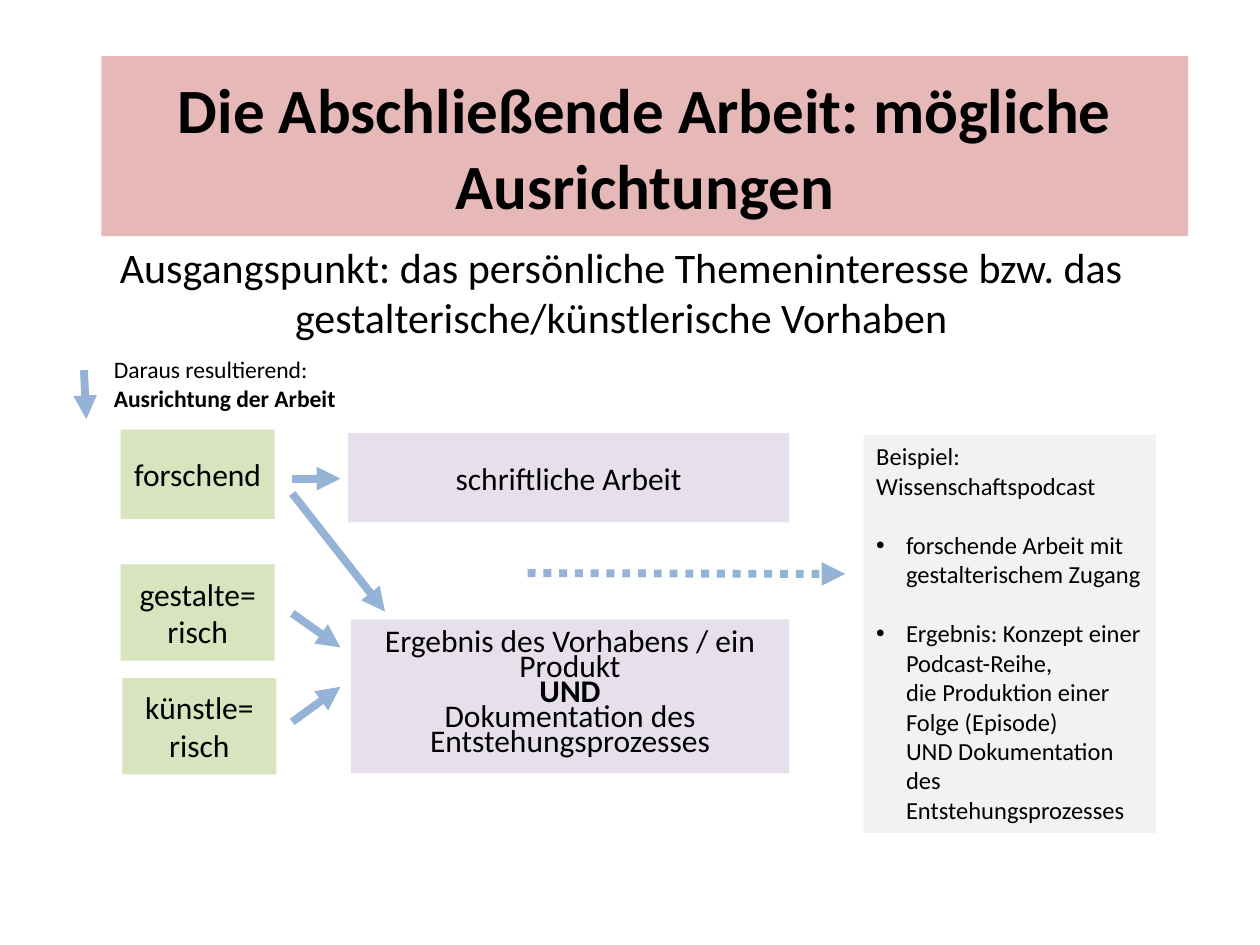
from lxml.etree import SubElement
from pptx import Presentation
from pptx.dml.color import RGBColor
from pptx.enum.dml import MSO_LINE_DASH_STYLE as Dash
from pptx.enum.shapes import MSO_CONNECTOR_TYPE as Connector, MSO_SHAPE as Shape
from pptx.enum.text import MSO_ANCHOR as Anchor, MSO_AUTO_SIZE as AutoSize, PP_ALIGN as Align
from pptx.oxml.ns import qn
from pptx.util import Pt

BLACK = RGBColor(0, 0, 0)
ROSE = RGBColor(0xE6, 0xB9, 0xB8)
GREEN = RGBColor(0xD7, 0xE4, 0xBD)
LILAC = RGBColor(0xE6, 0xE0, 0xEC)
GREY = RGBColor(0xF2, 0xF2, 0xF2)
BLUE = RGBColor(0x95, 0xB3, 0xD7)


def write(target, paragraphs, size=18, bold=(), align=Align.CENTER,
          anchor=Anchor.MIDDLE, leading=None, gap=0):
    frame = target.text_frame
    frame.word_wrap = True
    frame.auto_size = AutoSize.NONE
    frame.vertical_anchor = anchor
    for index, text in enumerate(paragraphs):
        paragraph = frame.add_paragraph() if index else frame.paragraphs[0]
        paragraph.alignment = align
        paragraph.space_before = Pt(gap if index else 0)
        if leading:
            paragraph.line_spacing = Pt(leading)
        for number, line in enumerate(text.split("\n")):
            if number:
                paragraph.add_line_break()
            run = paragraph.add_run()
            run.text = line
            font = run.font
            font.name, font.size, font.bold = "Calibri", Pt(size), line in bold
            font.color.rgb = BLACK
    return frame


def place(target, box):
    target.left, target.top, target.width, target.height = map(Pt, box)


def fill(target, color):
    target.fill.solid()
    target.fill.fore_color.rgb = color


def add_box(slide, box, color, paragraphs, **style):
    rectangle = slide.shapes.add_shape(Shape.RECTANGLE, *map(Pt, box))
    rectangle.shadow.inherit = False
    fill(rectangle, color)
    rectangle.line.fill.background()
    write(rectangle, paragraphs, **style)


def add_label(slide, box, paragraphs, **style):
    label = slide.shapes.add_textbox(*map(Pt, box))
    write(label, paragraphs, anchor=Anchor.TOP, **style)


def add_arrow(slide, start, end, dash=None):
    arrow = slide.shapes.add_connector(Connector.STRAIGHT, *map(Pt, start + end))
    arrow.line.color.rgb = BLUE
    arrow.line.width = Pt(4.5)
    if dash:
        arrow.line.dash_style = dash
    SubElement(arrow.line._get_or_add_ln(), qn("a:tailEnd"), type="triangle")
    SubElement(arrow._element.spPr, qn("a:effectLst"))


def add_heading(slide, box):
    title = slide.shapes.title
    place(title, box)
    fill(title, ROSE)
    heading = "Die Abschließende Arbeit: mögliche Ausrichtungen"
    write(title, [heading], size=36, bold=(heading,))


def add_introduction(slide, box):
    left, top, width, height = box
    add_label(slide, (left + 3, top, width, height),
              ["Ausgangspunkt: das persönliche Themeninteresse bzw. "
               "das gestalterische/künstlerische Vorhaben"], size=24)
    add_label(slide, (left, top + 65, 262, 40),
              ["Daraus resultierend:\nAusrichtung der Arbeit"], size=13.5,
              bold=("Ausrichtung der Arbeit",), align=Align.LEFT)
    add_arrow(slide, (left - 10, top + 77), (left - 8.7, top + 105))


def add_orientations(slide, box):
    left, top, width = box
    rows = [(0, 0, 51, ["forschend"]),
            (0, 77, 55, ["gestalte=", "risch"]),
            (1, 142, 55, ["künstle=", "risch"])]
    for shift, offset, height, words in rows:
        add_box(slide, (left + shift, top + offset, width, height), GREEN, words)


def add_results(slide, box):
    left, top, width = box
    add_box(slide, (left, top, width, 51), LILAC, ["schriftliche Arbeit"])
    add_box(slide, (left + 1.5, top + 106.5, width - 1.5, 88), LILAC,
            ["Ergebnis des Vorhabens / ein Produkt\nUND",
             "Dokumentation des Entstehungsprozesses"],
            bold=("UND",), leading=14.2)


def add_links(slide, box):
    left, top, width = box
    right = left + width
    for start, end in [((left, top), (right, top)),
                       ((left, top + 8.5), (left + 53, top + 76)),
                       ((left, top + 77), (right, top + 96.5)),
                       ((left, top + 139), (right, top + 119))]:
        add_arrow(slide, start, end)
    add_arrow(slide, (left + 134.5, top + 54), (left + 316, top + 54.5),
              dash=Dash.ROUND_DOT)


def add_example(slide, box):
    example = slide.placeholders[1]
    place(example, box)
    fill(example, GREY)
    frame = write(example, [
        "Beispiel: Wissenschaftspodcast",
        "forschende Arbeit mit gestalterischem Zugang",
        "Ergebnis: Konzept einer Podcast-Reihe,\n"
        "die Produktion einer Folge (Episode)\n"
        "UND Dokumentation des Entstehungsprozesses",
    ], size=14, align=Align.LEFT, anchor=Anchor.TOP, gap=17)
    for index, paragraph in enumerate(frame.paragraphs):
        properties = paragraph._p.get_or_add_pPr()
        indent = Pt(17) if index else 0
        properties.set("marL", str(indent))
        properties.set("indent", str(-indent))
        if index:
            SubElement(properties, qn("a:buFont"), typeface="Arial")
            SubElement(properties, qn("a:buChar"), char="•")
        else:
            SubElement(properties, qn("a:buNone"))


def main():
    deck = Presentation()
    deck.slide_width, deck.slide_height = Pt(720), Pt(540)
    slide = deck.slides.add_slide(deck.slide_layouts[1])
    add_heading(slide, (58, 32, 621, 103))
    add_orientations(slide, (69, 245.5, 88))
    add_results(slide, (199, 247.5, 252))
    add_links(slide, (167, 273.5, 27.5))
    add_example(slide, (493.5, 248.5, 167, 227.5))
    add_introduction(slide, (58, 134.5, 588, 65.5))
    deck.save("out.pptx")


if __name__ == "__main__":
    main()
